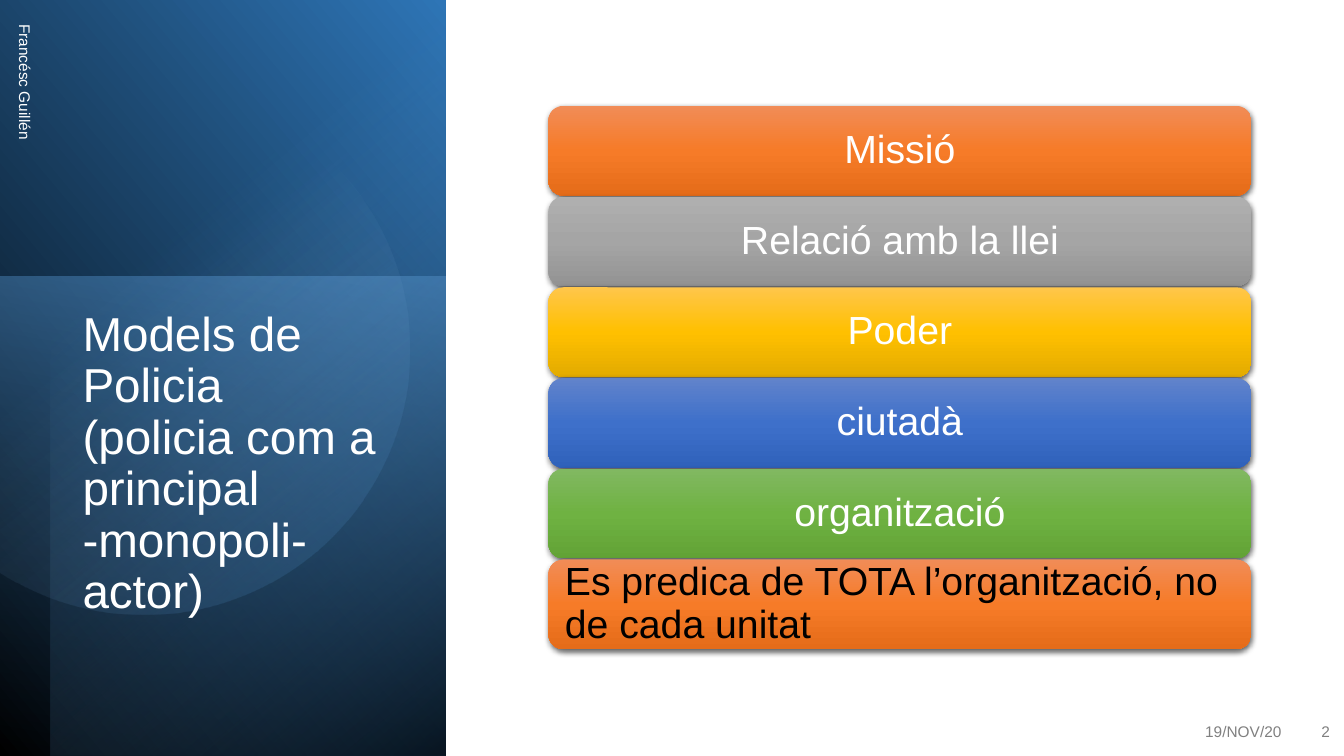
"""Build a slide on police models: a dark title panel beside six stacked bars."""
from math import acos, cos, sin

from pptx import Presentation
from pptx.dml.color import RGBColor
from pptx.enum.shapes import MSO_SHAPE
from pptx.enum.text import MSO_ANCHOR, PP_ALIGN
from pptx.oxml import parse_xml
from pptx.oxml.ns import nsdecls, qn
from pptx.util import Inches, Pt

RECT, ROUND = MSO_SHAPE.RECTANGLE, MSO_SHAPE.ROUNDED_RECTANGLE
TOP, MIDDLE = MSO_ANCHOR.TOP, MSO_ANCHOR.MIDDLE
LEFT, CENTER, RIGHT = PP_ALIGN.LEFT, PP_ALIGN.CENTER, PP_ALIGN.RIGHT
WHITE, BLACK, GRAY = "FFFFFF", "000000", "808080"
ORANGE = ("F18C57", "F67B28", "E56C19")
BARS = [
    ("Missió", ORANGE),
    ("Relació amb la llei", ("AFAFAF", "A5A5A5", "939393")),
    ("Poder", ("FFC64B", "FFC000", "E3AB00")),
    ("ciutadà", ("6183CB", "3E70CA", "3062BB")),
    ("organització", ("81B861", "6FB242", "62A336")),
    ("Es predica de TOTA l’organització, no de cada unitat", ORANGE),
]
PANELS = [
    ((-1.55, 1.55, 7.52, 4.42), 90, True, 310,
     [(0, "000000", 100), (100, "2E75B6", 100)]),
    ((-0.17, 2.91, 4.76, 4.42), 270, False, 190,
     [(0, "5B9BD5", 50), (100, "1F4E79", 0)]),
    ((-1.29, 1.79, 7.5, 3.92), 270, True, 220,
     [(0, "000000", 59), (69, "5B9BD5", 0)]),
]


def color(value):
    """Turn a hex string into a colour."""
    return RGBColor.from_string(value)


def put(target, values):
    """Set attributes of a target from a dict."""
    for name, value in values.items():
        setattr(target, name, value)


def blend(shape, stops, angle):
    """Give a shape a linear gradient without line or shadow."""
    shape.shadow.inherit = False
    shape.line.fill.background()
    shape.fill.gradient()
    marks = "".join(
        f'<a:gs pos="{pos * 1000}"><a:srgbClr val="{tone}">'
        f'<a:alpha val="{alpha * 1000}"/></a:srgbClr></a:gs>'
        for pos, tone, alpha in stops)
    props = shape._element.spPr
    props.replace(props.find(qn("a:gradFill")), parse_xml(
        f'<a:gradFill {nsdecls("a")} rotWithShape="1"><a:gsLst>{marks}</a:gsLst>'
        f'<a:lin ang="{angle * 60000}" scaled="0"/></a:gradFill>'))


def shade(shape):
    """Add a soft shadow below a shape."""
    effects = shape._element.spPr.find(qn("a:effectLst"))
    effects.append(parse_xml(
        f'<a:outerShdw {nsdecls("a")} blurRad="{Pt(4.5)}" dist="{Pt(1.5)}" '
        'dir="5400000" algn="ctr" rotWithShape="0"><a:srgbClr val="000000">'
        '<a:alpha val="63000"/></a:srgbClr></a:outerShdw>'))


def write(shape, text, size, tone, align, anchor, sides=0.1, ends=0.05, space=1.0):
    """Write one formatted paragraph into a shape."""
    frame = shape.text_frame
    put(frame, {"word_wrap": True, "vertical_anchor": anchor,
                "margin_left": Inches(sides), "margin_right": Inches(sides),
                "margin_top": Inches(ends), "margin_bottom": Inches(ends)})
    para = frame.paragraphs[0]
    para.text = text
    put(para, {"alignment": align, "line_spacing": space})
    for run in para.runs:
        put(run.font, {"name": "Arial", "size": Pt(size)})
        run.font.color.rgb = color(tone)


def label(slide, box, text, size, tone, align, anchor=MIDDLE, turn=0, space=1.0):
    """Add a text box."""
    shape = slide.shapes.add_textbox(*map(Inches, box))
    shape.rotation = turn
    write(shape, text, size, tone, align, anchor, space=space)


def panel(slide, box, turn, flip, angle, stops):
    """Add a turned gradient rectangle."""
    shape = slide.shapes.add_shape(RECT, *map(Inches, box))
    shape.rotation = turn
    if flip:
        shape._element.spPr.find(qn("a:xfrm")).set("flipH", "1")
    blend(shape, stops, angle)


def disc(slide, mid_x, mid_y, radius, steps=120):
    """Add a glowing disc cut off at the left slide edge."""
    reach = acos(-mid_x / radius)
    turns = [reach * (2 * step / steps - 1) for step in range(steps + 1)]
    points = [(Inches(mid_x + radius * cos(turn)), Inches(mid_y + radius * sin(turn)))
              for turn in turns]
    builder = slide.shapes.build_freeform(*points[0])
    builder.add_line_segments(points[1:], close=True)
    blend(builder.convert_to_shape(), [(39, "9DC3E6", 0), (100, "2E75B6", 26)], 52)


def bar(slide, row, text, tones):
    """Add one bar of the stack."""
    shape = slide.shapes.add_shape(
        ROUND, Inches(5.44), Inches(1.05 + 0.9 * row), Inches(6.97), Inches(0.89))
    blend(shape, [(50 * spot, tone, 100) for spot, tone in enumerate(tones)], 90)
    shade(shape)
    last = row == len(BARS) - 1
    write(shape, text, 28, BLACK if last else WHITE, LEFT if last else CENTER,
          MIDDLE, sides=0.12, ends=0.02, space=0.9)


def main():
    """Build and save the slide."""
    deck = Presentation()
    put(deck, {"slide_width": Inches(13.33), "slide_height": Inches(7.5)})
    slide = deck.slides.add_slide(deck.slide_layouts[6])
    for item in PANELS:
        panel(slide, *item)
    disc(slide, 1.43, 3.47, 2.63)
    label(slide, (0.72, 3.03, 3.15, 3.36),
          "Models de Policia\v(policia com a principal\v-monopoli- actor)",
          34, WHITE, LEFT, TOP, space=0.9)
    label(slide, (-2, 2.19, 4.5, 0.4), "Francésc Guillén", 11, WHITE, LEFT, turn=90)
    label(slide, (9.81, 7.06, 3, 0.4), "19/NOV/20", 11, GRAY, RIGHT)
    label(slide, (12.8, 7.06, 0.49, 0.4), "2", 11, GRAY, RIGHT)
    for row, (text, tones) in enumerate(BARS):
        bar(slide, row, text, tones)
    deck.save("out.pptx")


if __name__ == "__main__":
    main()
